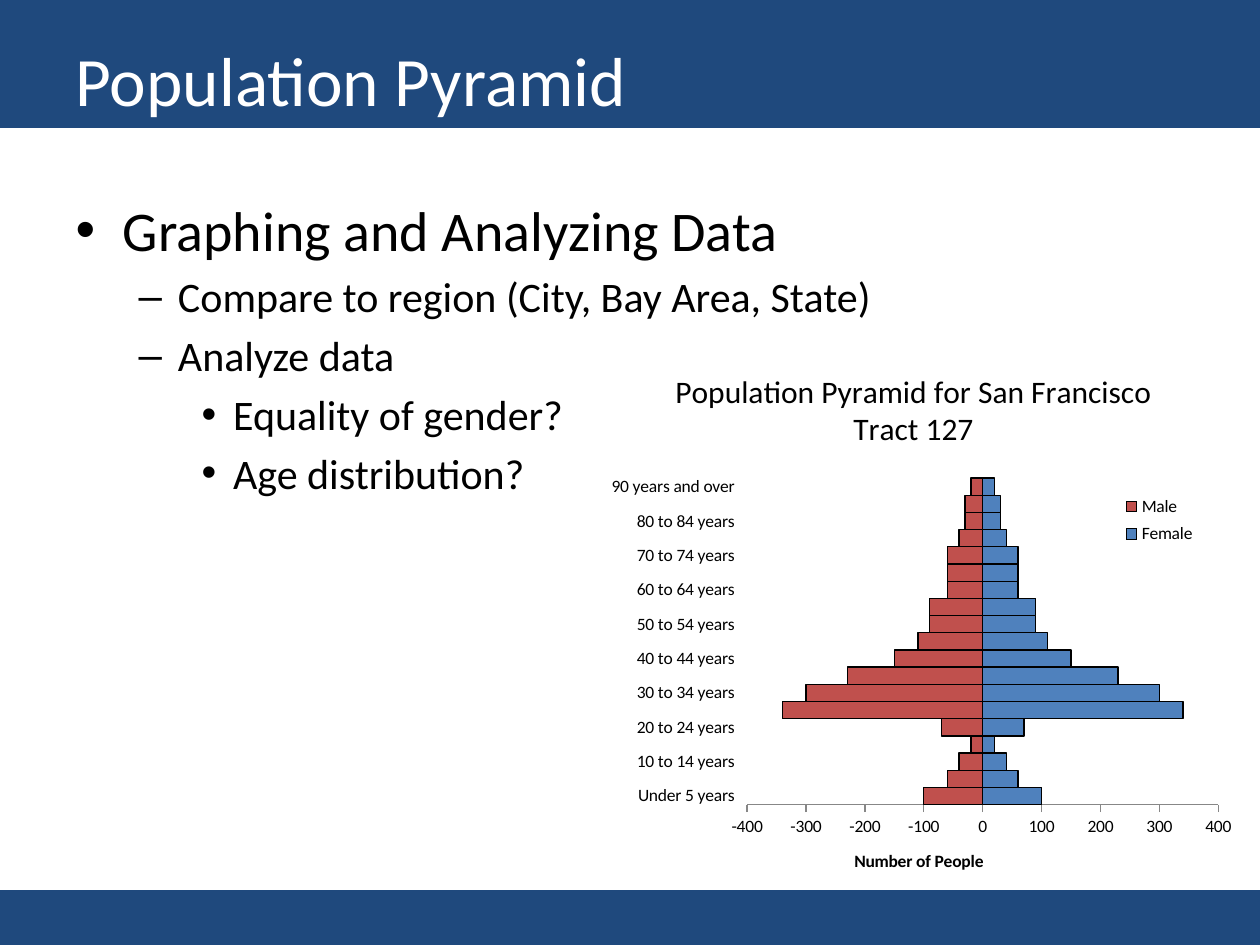
from pptx import Presentation, util as u
from pptx.chart import data as chart_data
from pptx.dml.color import RGBColor
from pptx.enum import chart as charts, shapes, text
from pptx.oxml import parse_xml
from pptx.oxml.ns import nsdecls

NAVY = RGBColor(0x1F, 0x49, 0x7D)
WHITE = RGBColor(0xFF, 0xFF, 0xFF)
BLACK = RGBColor(0, 0, 0)
GREY = RGBColor(0x87, 0x87, 0x87)
BLUE = RGBColor(0x4F, 0x81, 0xBD)
RED = RGBColor(0xC0, 0x50, 0x4D)
FONT = "Calibri"

OUTLINE = [
    ("Graphing and Analyzing Data", 0, 32),
    ("Compare to region (City, Bay Area, State)", 1, 24),
    ("Analyze data", 1, 24),
    ("Equality of gender?", 2, 24),
    ("Age distribution?", 2, 24),
]
AGES = (
    ["Under 5 years"]
    + [f"{age} to {age + 4} years" for age in range(5, 90, 5)]
    + ["90 years and over"]
)
PEOPLE = [100, 60, 40, 20, 70, 340, 300, 230, 150, 110,
          90, 90, 60, 60, 60, 40, 30, 30, 20]


def place(shape, left, top, width, height):
    """Set the position and size of a shape in inches."""
    shape.left, shape.top = u.Inches(left), u.Inches(top)
    shape.width, shape.height = u.Inches(width), u.Inches(height)


def format_font(font, size, color=BLACK, bold=False):
    """Apply the common typeface with a size, colour and weight."""
    font.name, font.size, font.bold = FONT, u.Pt(size), bold
    font.color.rgb = color


def write(paragraph, content, level=0, align=None, **style):
    """Put formatted text into a paragraph."""
    paragraph.level, paragraph.alignment = level, align
    run = paragraph.add_run()
    run.text = content
    format_font(run.font, **style)


def add_band(slide, top, height):
    """Add a full-width band and return it."""
    band = slide.shapes.add_shape(
        shapes.MSO_SHAPE.RECTANGLE, 0, u.Inches(top), u.Inches(10), u.Inches(height))
    band.shadow.inherit = False
    band.fill.solid()
    band.fill.fore_color.rgb = NAVY
    band.line.color.rgb = NAVY
    band.line.width = u.Pt(2)
    return band


def fill_title(title):
    """Format the title placeholder and write the title."""
    place(title, 0.5, 0.25, 9, 0.75)
    frame = title.text_frame
    frame.auto_size = text.MSO_AUTO_SIZE.NONE
    frame.vertical_anchor = text.MSO_ANCHOR.MIDDLE
    write(frame.paragraphs[0], "Population Pyramid", align=text.PP_ALIGN.LEFT,
          size=39.6, color=WHITE)


def fill_body(body):
    """Write the outline into the body placeholder."""
    place(body, 0.5, 1.5, 9, 5.2)
    frame = body.text_frame
    for index, (content, level, size) in enumerate(OUTLINE):
        paragraph = frame.add_paragraph() if index else frame.paragraphs[0]
        write(paragraph, content, level=level, size=size)


def set_layout(parent, index, target="", **shares):
    """Give a chart part a manual layout in shares of the chart."""
    for old in parent.xpath("c:layout"):
        parent.remove(old)
    inner = f'<c:layoutTarget val="{target}"/>' if target else ""
    inner += "".join(f'<c:{key}Mode val="edge"/>' for key in "xy")
    inner += "".join(f'<c:{key} val="{share}"/>' for key, share in shares.items())
    parent.insert(index, parse_xml(
        f'<c:layout {nsdecls("c")}><c:manualLayout>{inner}</c:manualLayout></c:layout>'))


def format_axes(chart):
    """Format both axes, their labels and the value title."""
    ages, people = chart.category_axis, chart.value_axis
    for axis, color in ((ages, BLACK), (people, GREY)):
        axis.has_major_gridlines = False
        axis.major_tick_mark = charts.XL_TICK_MARK.OUTSIDE
        axis.minor_tick_mark = charts.XL_TICK_MARK.NONE
        axis.format.line.color.rgb = color
        axis.format.line.width = u.Pt(0.75)
        format_font(axis.tick_labels.font, 10)
    ages.tick_label_position = charts.XL_TICK_LABEL_POSITION.LOW
    chart.element.xpath(".//c:catAx/c:noMultiLvlLbl")[0].addprevious(
        parse_xml(f'<c:tickLblSkip {nsdecls("c")} val="2"/>'))
    people.minimum_scale, people.maximum_scale, people.major_unit = -400, 400, 100
    write(people.axis_title.text_frame.paragraphs[0], "Number of People",
          size=10, bold=True)
    set_layout(chart.element.xpath(".//c:valAx/c:title")[0], 1, x=0.41, y=0.95)


def add_pyramid(slide):
    """Add the population pyramid as a clustered bar chart."""
    data = chart_data.CategoryChartData()
    data.categories = AGES
    data.add_series("Female", PEOPLE)
    data.add_series("Male", [-count for count in PEOPLE])
    chart = slide.shapes.add_chart(
        charts.XL_CHART_TYPE.BAR_CLUSTERED, u.Inches(4.5), u.Inches(2.75),
        u.Inches(5.5), u.Inches(4.21), data).chart
    format_font(chart.font, 10)
    write(chart.chart_title.text_frame.paragraphs[0],
          "Population Pyramid for San Francisco Tract 127", size=18)
    chart.element.xpath("c:chart/c:title/c:overlay")[0].set("val", "1")
    plot = chart.plots[0]
    plot.gap_width, plot.overlap, plot.vary_by_categories = 0, 100, False
    for series, color in zip(plot.series, (BLUE, RED)):
        series.invert_if_negative = False
        series.format.fill.solid()
        series.format.fill.fore_color.rgb = color
        series.format.line.color.rgb = BLACK
        series.format.line.width = u.Pt(0.75)
    format_axes(chart)
    chart.has_legend = True
    chart.legend.position = charts.XL_LEGEND_POSITION.RIGHT
    chart.legend.include_in_layout = False
    format_font(chart.legend.font, 10)
    set_layout(chart.element.xpath("c:chart/c:legend")[0], 1,
               x=0.79, y=0.27, w=0.13, h=0.12)
    set_layout(chart.element.xpath("c:chart/c:plotArea")[0], 0, "inner",
               x=0.26, y=0.25, w=0.68, h=0.62)


def main():
    """Build the slide and save it."""
    presentation = Presentation()
    presentation.slide_width, presentation.slide_height = u.Inches(10), u.Inches(7.5)
    slide = presentation.slides.add_slide(presentation.slide_layouts[1])
    title, body = slide.shapes.title, slide.placeholders[1]
    fill_body(body)
    fill_title(title)
    header = add_band(slide, 0, 1)
    header.element.addnext(title.element)
    add_band(slide, 7.08, 0.42)
    add_pyramid(slide)
    presentation.save("out.pptx")


if __name__ == "__main__":
    main()
